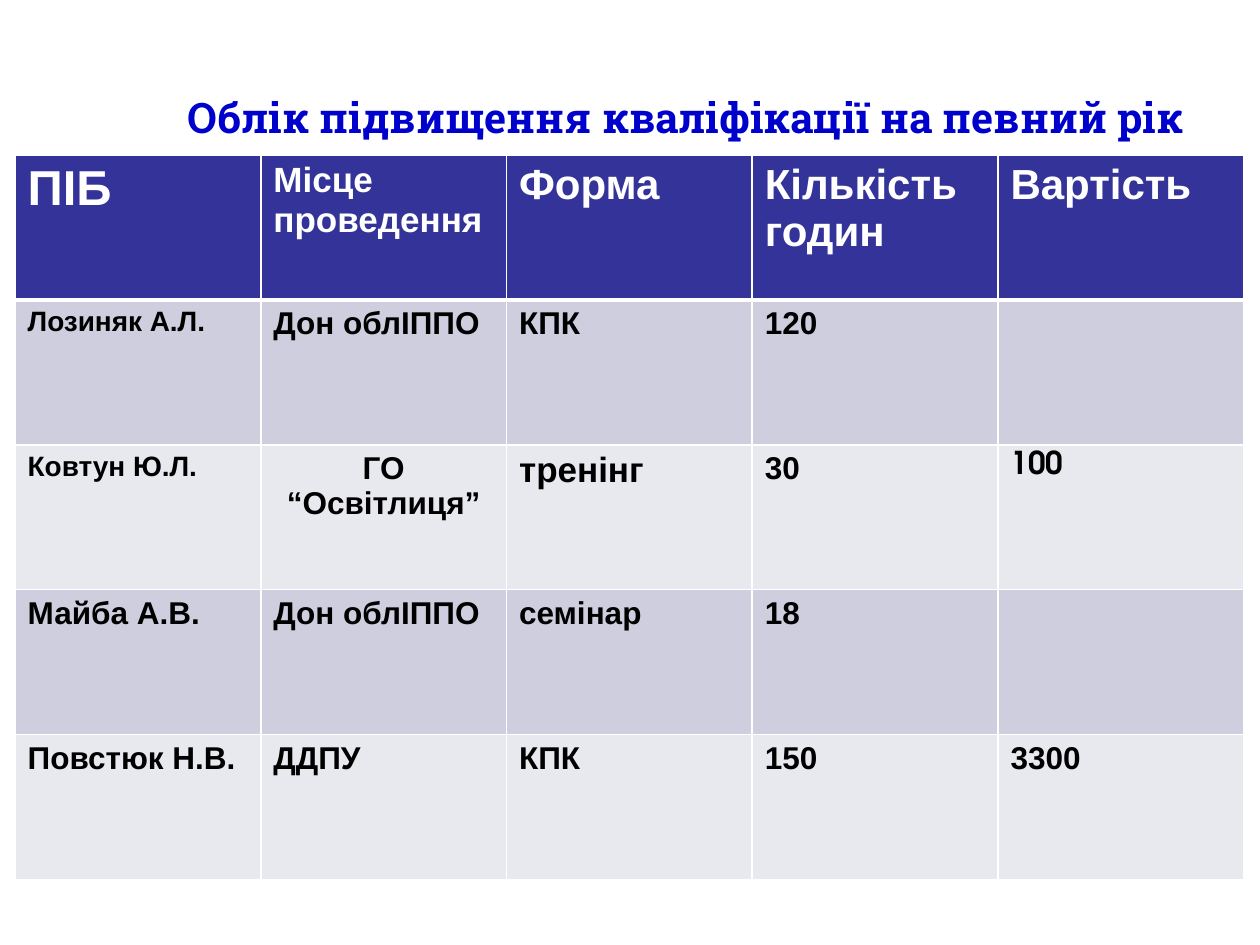
import pptx
import pptx.dml.color
import pptx.enum.text
import pptx.oxml
import pptx.oxml.ns
import pptx.util
from pptx.util import Inches

ALIGN = pptx.enum.text.PP_ALIGN


def color(hex_string):
    return pptx.dml.color.RGBColor.from_string(hex_string)


def add_border(cell, side, points):
    cell._tc.get_or_add_tcPr().append(pptx.oxml.parse_xml(
        f'<a:ln{side} {pptx.oxml.ns.nsdecls("a")} w="{pptx.util.Pt(points)}">'
        f'<a:solidFill><a:srgbClr val="FFFFFF"/></a:solidFill></a:ln{side}>'))


deck = pptx.Presentation()
deck.slide_width, deck.slide_height = Inches(10), Inches(7.5)
page = deck.slides.add_slide(deck.slide_layouts[5])

# Title
title = page.shapes.title
title.left, title.top = Inches(0.5), Inches(0.3)
title.width, title.height = Inches(9), Inches(1.25)
title.text_frame.vertical_anchor = pptx.enum.text.MSO_ANCHOR.MIDDLE
para = title.text_frame.paragraphs[0]
para.text = "Облік підвищення кваліфікації на певний рік"
para.alignment = ALIGN.RIGHT
para.font.name = "Roboto Slab"
para.font.size = pptx.util.Pt(24)
para.font.bold = True
para.font.color.rgb = color("0000CC")

# Table content: text and size of each cell
rows = [
    [("ПІБ", 28), ("Місце проведення", 20), ("Форма", 24), ("Кількість годин", 24), ("Вартість", 24)],
    [("Лозиняк А.Л.", 16), ("Дон облІППО", 18), ("КПК", 18), ("120", 18), ("", 18)],
    [("Ковтун Ю.Л.", 16), ("ГО “Освітлиця”", 18), ("тренінг", 20), ("30", 18), ("100", 18)],
    [("Майба А.В.", 18), ("Дон облІППО", 18), ("семінар", 18), ("18", 18), ("", 18)],
    [("Повстюк Н.В.", 18), ("ДДПУ", 18), ("КПК", 18), ("150", 18), ("3300", 18)],
]
column_width, row_height = 1.95, 1.15
table = page.shapes.add_table(
    len(rows), len(rows[0]), Inches(0.12), Inches(1.23),
    Inches(column_width * len(rows[0])), Inches(row_height * len(rows))).table
for column in table.columns:
    column.width = Inches(column_width)
for row in table.rows:
    row.height = Inches(row_height)

# Header, banded rows and white borders, thicker under the header
for row_index, row in enumerate(rows):
    is_header = row_index == 0
    fill = "333399" if is_header else ("E8E8EF", "CECEDE")[row_index % 2]
    for column_index, (text, size) in enumerate(row):
        cell = table.cell(row_index, column_index)
        add_border(cell, "L", 1)
        add_border(cell, "R", 1)
        add_border(cell, "T", 3 if row_index == 1 else 1)
        add_border(cell, "B", 3 if is_header else 1)
        cell.fill.solid()
        cell.fill.fore_color.rgb = color(fill)
        para = cell.text_frame.paragraphs[0]
        para.text = text
        para.font.name = "Arial"
        para.font.size = pptx.util.Pt(size)
        para.font.bold = True
        para.font.color.rgb = color("FFFFFF" if is_header else "000000")

# Cells that differ from the rest
table.cell(2, 1).text_frame.paragraphs[0].alignment = ALIGN.CENTER
table.cell(2, 4).text_frame.paragraphs[0].font.name = "TeX Gyre Adventor"

deck.save("out.pptx")
